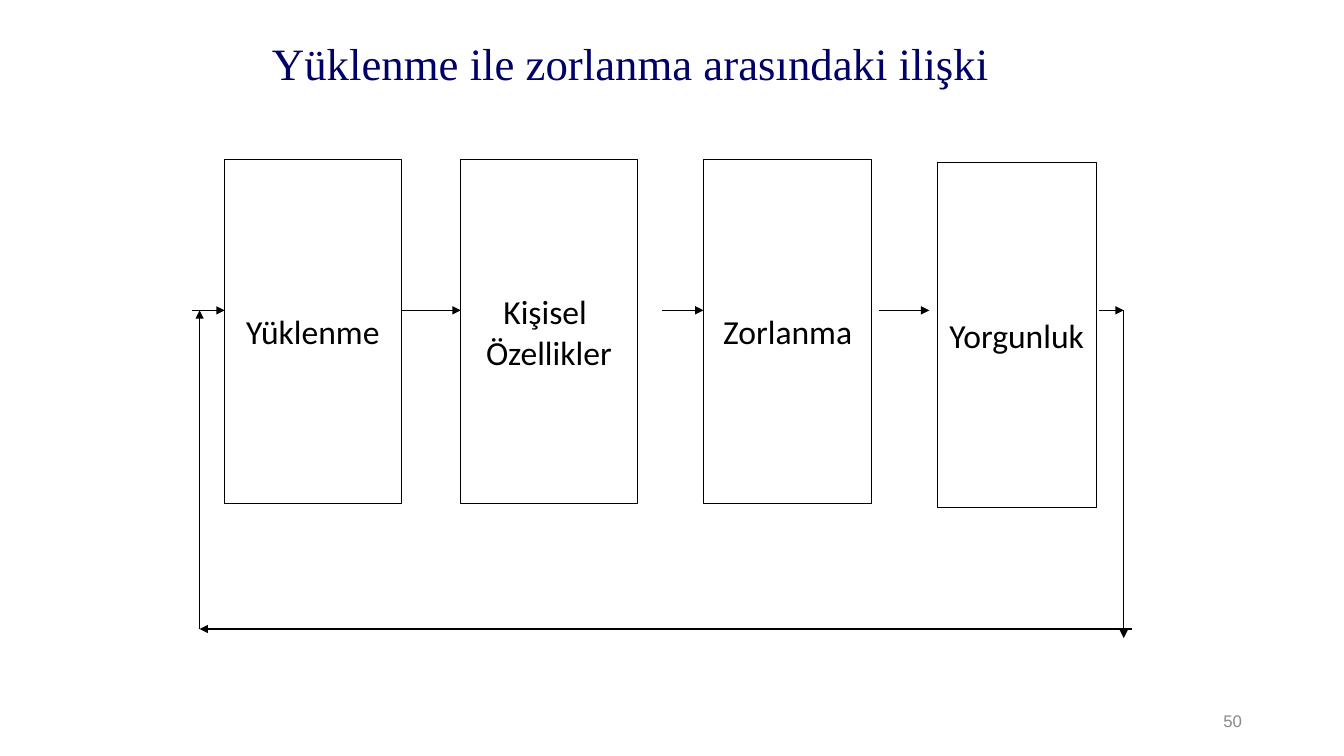
from lxml.etree import SubElement
from pptx import Presentation
from pptx.dml.color import RGBColor
from pptx.enum.shapes import MSO_CONNECTOR as CONNECTOR, MSO_SHAPE as SHAPE
from pptx.enum.text import MSO_ANCHOR as ANCHOR, MSO_AUTO_SIZE as AUTO_SIZE, PP_ALIGN as ALIGN
from pptx.oxml.ns import qn
from pptx.util import Cm, Pt

COLORS = {"ink": "000000", "paper": "FFFFFF", "title": "000066", "number": "898989"}
TITLE_FONT = {"name": "Times New Roman", "size": Pt(32), "bold": False}
BOX_FONT = {"name": "Calibri", "size": Pt(24)}
NUMBER_FONT = {"name": "Arial", "size": Pt(12)}

BOX_HEIGHT = 8.69
FLOW_Y, RETURN_Y = 7.82, 15.85
RETURN_LEFT, RETURN_RIGHT = 5.03, 28.32

BOXES = [
    ("Yüklenme", 5.66, 4.01, 4.45),
    ("Kişisel \nÖzellikler", 11.61, 4.01, 4.45),
    ("Zorlanma", 17.73, 4.01, 4.24),
    ("Yorgunluk", 23.62, 4.09, 4.01),
]
FLOW_SPANS = [
    (4.83, 5.66),
    (10.11, 11.61),
    (16.69, 17.73),
    (22.15, 23.42),
    (27.69, RETURN_RIGHT),
]
RETURN_ARROWS = [
    (RETURN_RIGHT, FLOW_Y, RETURN_RIGHT, 16.08),
    (28.52, RETURN_Y, RETURN_LEFT, RETURN_Y),
    (RETURN_LEFT, RETURN_Y, RETURN_LEFT, FLOW_Y),
]


def color(name):
    return RGBColor.from_string(COLORS[name])


def write_text(shape, text, font, color_name, alignment, anchor, wrap=True):
    frame = shape.text_frame
    frame.text = text
    frame.word_wrap = wrap
    frame.auto_size = AUTO_SIZE.NONE
    frame.vertical_anchor = anchor
    for paragraph in frame.paragraphs:
        paragraph.alignment = alignment
        for run in paragraph.runs:
            for attribute, value in font.items():
                setattr(run.font, attribute, value)
            run.font.color.rgb = color(color_name)


def style_line(line):
    line.color.rgb = color("ink")
    line.width = Pt(0.75)


def add_title(slide, text, left, top, width, height):
    title = slide.shapes.title
    title.left, title.top, title.width, title.height = map(Cm, (left, top, width, height))
    write_text(title, text, TITLE_FONT, "title", ALIGN.LEFT, ANCHOR.TOP)


def add_box(slide, text, left, top, width):
    box = slide.shapes.add_shape(SHAPE.RECTANGLE, *map(Cm, (left, top, width, BOX_HEIGHT)))
    box.shadow.inherit = False
    box.fill.solid()
    box.fill.fore_color.rgb = color("paper")
    style_line(box.line)
    write_text(box, text, BOX_FONT, "ink", ALIGN.CENTER, ANCHOR.MIDDLE, wrap=False)


def add_arrow(slide, *ends):
    arrow = slide.shapes.add_connector(CONNECTOR.STRAIGHT, *map(Cm, ends))
    style_line(arrow.line)
    SubElement(arrow.line._get_or_add_ln(), qn("a:tailEnd"), type="triangle")
    SubElement(arrow._element.spPr, qn("a:effectLst"))


def add_page_number(slide, text, left, top, width, height):
    number = slide.shapes.add_textbox(*map(Cm, (left, top, width, height)))
    write_text(number, text, NUMBER_FONT, "number", ALIGN.RIGHT, ANCHOR.MIDDLE)


def main():
    presentation = Presentation()
    presentation.slide_width, presentation.slide_height = Cm(33.87), Cm(19.05)
    slide = presentation.slides.add_slide(presentation.slide_layouts.get_by_name("Title Only"))

    add_title(slide, "Yüklenme ile zorlanma arasındaki ilişki", 6.6, 0.76, 20.04, 1.63)
    for box in BOXES:
        add_box(slide, *box)
    for start, end in FLOW_SPANS:
        add_arrow(slide, start, FLOW_Y, end, FLOW_Y)
    for ends in RETURN_ARROWS:
        add_arrow(slide, *ends)
    add_page_number(slide, "50", 23.93, 17.65, 7.62, 1.02)

    presentation.save("out.pptx")


if __name__ == "__main__":
    main()
